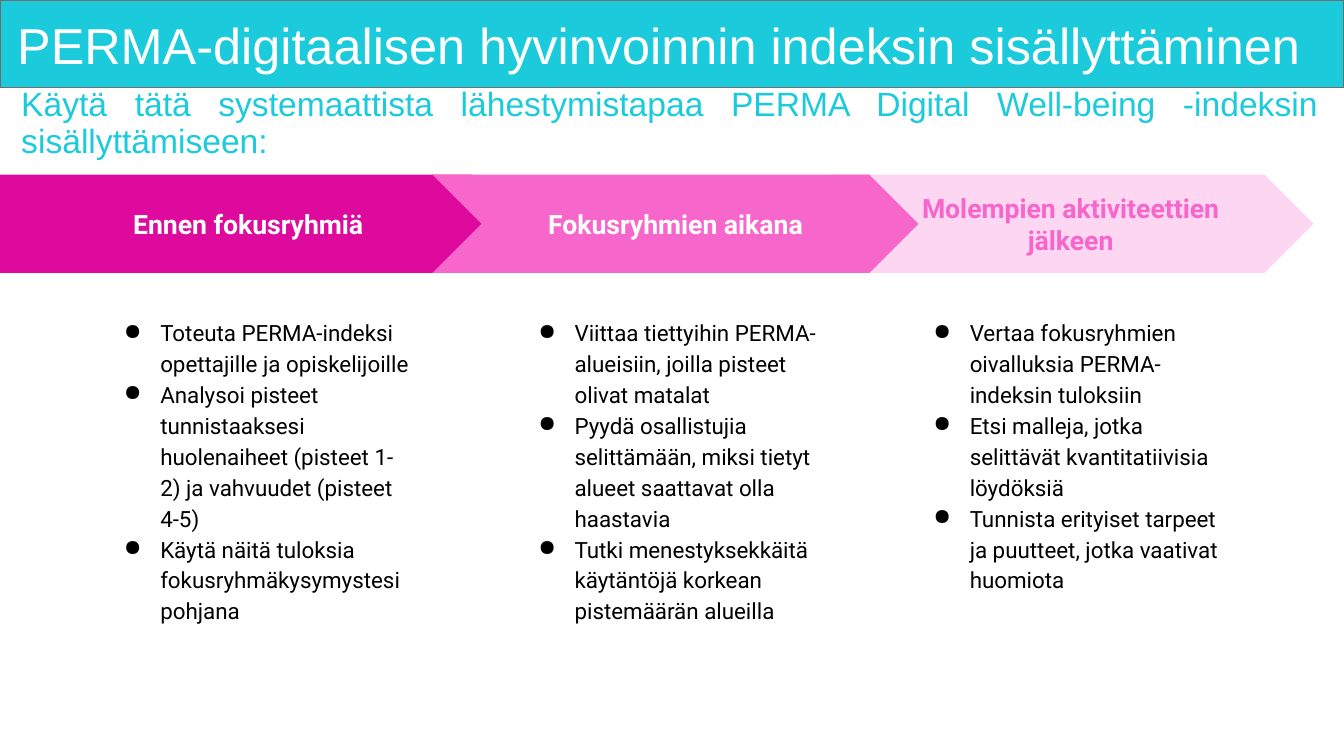
import pptx
import pptx.util
import pptx.dml.color
import pptx.enum.shapes
import pptx.enum.text
import pptx.oxml
import pptx.oxml.ns
from dataclasses import dataclass

Align = pptx.enum.text.PP_ALIGN
Anchor = pptx.enum.text.MSO_ANCHOR
Preset = pptx.enum.shapes.MSO_SHAPE

WIDTH, HEIGHT = pptx.util.Inches(13.33), pptx.util.Inches(7.5)


@dataclass(frozen=True)
class Theme:
    cyan: str = "1BCBDC"
    outline: str = "6C6E70"
    white: str = "FFFFFF"
    black: str = "000000"
    magenta: str = "DE0A9D"
    pink: str = "F766CA"
    blush: str = "FDD6F1"
    heading_font: str = "Arial"
    step_font: str = "Roboto"
    title_size: int = 36
    lead_size: int = 24
    step_size: int = 19
    list_size: int = 16


THEME = Theme()

# Steps: preset shape, fill, text colour, arrow (left, width) and list left
# in percent of the slide's width, heading, list items
PITCH = 29.4
CHEVRON_LEFT, CHEVRON_WIDTH, LIST_INDENT = 32.18, 36.16, 5.85
STEPS = [
    (Preset.PENTAGON, THEME.magenta, THEME.white, 0, 38.78, 7.2,
     "Ennen fokusryhmiä",
     ["Toteuta PERMA-indeksi opettajille ja opiskelijoille",
      "Analysoi pisteet tunnistaaksesi huolenaiheet (pisteet 1-2) "
      "ja vahvuudet (pisteet 4-5)",
      "Käytä näitä tuloksia fokusryhmäkysymystesi pohjana"]),
    (Preset.CHEVRON, THEME.pink, THEME.white,
     CHEVRON_LEFT, CHEVRON_WIDTH, CHEVRON_LEFT + LIST_INDENT,
     "Fokusryhmien aikana",
     ["Viittaa tiettyihin PERMA-alueisiin, joilla pisteet olivat matalat",
      "Pyydä osallistujia selittämään, miksi tietyt alueet saattavat olla "
      "haastavia",
      "Tutki menestyksekkäitä käytäntöjä korkean pistemäärän alueilla"]),
    (Preset.CHEVRON, THEME.blush, THEME.pink,
     CHEVRON_LEFT + PITCH, CHEVRON_WIDTH, CHEVRON_LEFT + PITCH + LIST_INDENT,
     "Molempien aktiviteettien jälkeen",
     ["Vertaa fokusryhmien oivalluksia PERMA-indeksin tuloksiin",
      "Etsi malleja, jotka selittävät kvantitatiivisia löydöksiä",
      "Tunnista erityiset tarpeet ja puutteet, jotka vaativat huomiota"]),
]


def color(code):
    return pptx.dml.color.RGBColor.from_string(code)


def apply(target, formats):
    for name, value in formats.items():
        setattr(target, name, value)


def area(left, top, width, height):
    """Turn percentages of the slide's size into lengths."""
    return [int(share * side / 100) for share, side in
            zip((left, top, width, height), (WIDTH, HEIGHT) * 2)]


def set_frame(box, anchor, across, down):
    across, down = pptx.util.Inches(across), pptx.util.Inches(down)
    apply(box.text_frame, {
        "word_wrap": True, "auto_size": pptx.enum.text.MSO_AUTO_SIZE.NONE,
        "vertical_anchor": anchor, "margin_left": across,
        "margin_right": across, "margin_top": down, "margin_bottom": down})


def write(para, text, font, size, code, bold=False, **layout):
    para.text = text
    apply(para, {"space_before": pptx.util.Pt(0), **layout})
    apply(para.font, {"name": font, "size": pptx.util.Pt(size), "bold": bold})
    para.font.color.rgb = color(code)


def set_bullet(para, mark=None):
    """Give the paragraph a hanging bullet, or none."""
    left, hang = (0.5, -0.36) if mark else (0, 0)
    properties = para._p.get_or_add_pPr()
    properties.set("marL", str(pptx.util.Inches(left)))
    properties.set("indent", str(pptx.util.Inches(hang)))
    space = pptx.oxml.ns.nsdecls("a")
    parts = ([f'<a:buClr {space}><a:srgbClr val="{THEME.black}"/></a:buClr>',
              f'<a:buChar {space} char="{mark}"/>']
             if mark else [f"<a:buNone {space}/>"])
    for part in parts:
        properties.append(pptx.oxml.parse_xml(part))


def add_filled(page, preset, place, fill):
    shape = page.shapes.add_shape(preset, *place)
    shape.shadow.inherit = False
    shape.fill.solid()
    shape.fill.fore_color.rgb = color(fill)
    shape.line.fill.background()
    return shape


def add_band(page):
    band = add_filled(page, Preset.RECTANGLE, area(0, 0, 100, 11.6),
                      THEME.cyan)
    band.line.color.rgb = color(THEME.outline)
    band.line.width = pptx.util.Pt(1)
    page.shapes._spTree.insert(2, band._element)  # behind the title


def fill_placeholder(box, place, text, margins, size, code, align):
    apply(box, dict(zip(("left", "top", "width", "height"), place)))
    set_frame(box, Anchor.MIDDLE, *margins)
    para = box.text_frame.paragraphs[0]
    set_bullet(para)
    write(para, text, THEME.heading_font, size, code,
          alignment=align, line_spacing=0.9)


def add_step(page, preset, fill, ink, left, width, list_left, heading, items):
    # Arrow with the heading
    arrow = add_filled(page, preset, area(left, 23.1, width, 13), fill)
    arrow.adjustments[0] = 0.5
    set_frame(arrow, Anchor.MIDDLE, 0.13, 0.13)
    write(arrow.text_frame.paragraphs[0], heading, THEME.step_font,
          THEME.step_size, ink, bold=True, alignment=Align.CENTER)

    # List below the arrow
    box = page.shapes.add_textbox(*area(list_left, 40, 24.46, 50.8))
    set_frame(box, Anchor.TOP, 0.13, 0.13)
    for number, item in enumerate(items):
        frame = box.text_frame
        para = frame.add_paragraph() if number else frame.paragraphs[0]
        set_bullet(para, "●")
        write(para, item, THEME.step_font, THEME.list_size, THEME.black,
              alignment=Align.LEFT, line_spacing=1.15)


def main():
    deck = pptx.Presentation()
    apply(deck, {"slide_width": WIDTH, "slide_height": HEIGHT})
    page = deck.slides.add_slide(deck.slide_layouts[1])

    # Title band and lead text
    add_band(page)
    fill_placeholder(page.shapes.title, area(0.83, 1.2, 97.97, 10.4),
                     "PERMA-digitaalisen hyvinvoinnin indeksin sisällyttäminen",
                     (0.06, 0.06), THEME.title_size, THEME.white, Align.LEFT)
    fill_placeholder(page.placeholders[1], area(0.83, 12.4, 97.97, 8),
                     "Käytä tätä systemaattista lähestymistapaa PERMA Digital "
                     "Well-being -indeksin sisällyttämiseen:",
                     (0.1, 0.05), THEME.lead_size, THEME.cyan, Align.JUSTIFY)

    # Last step lies lowest, so that each tip covers the next arrow
    before, during, after = STEPS
    for step in (after, before, during):
        add_step(page, *step)

    deck.save("out.pptx")


if __name__ == "__main__":
    main()
